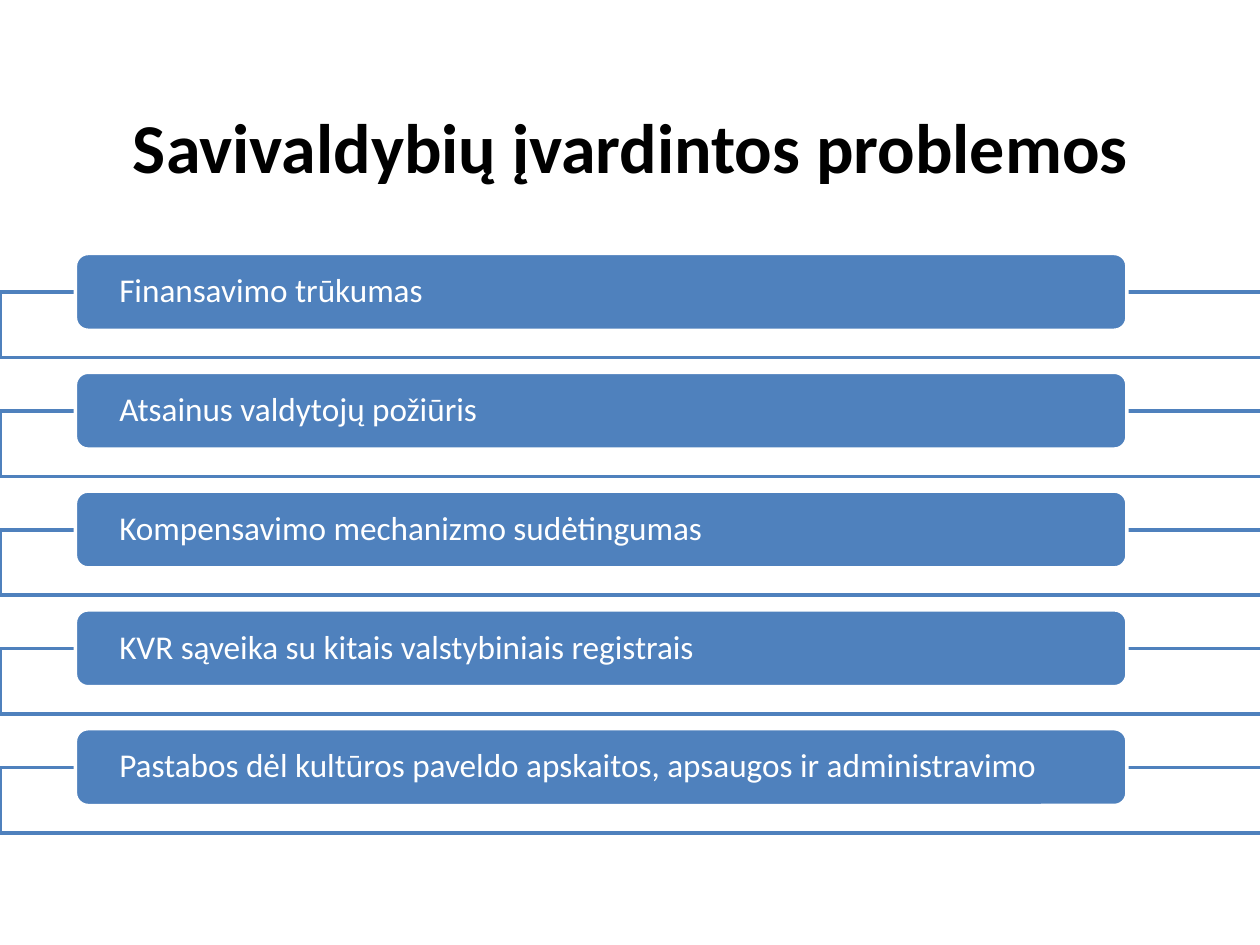
from lxml import etree
from pptx import Presentation
from pptx.dml.color import RGBColor
from pptx.enum.shapes import MSO_SHAPE as Shape
from pptx.enum.text import MSO_ANCHOR as Anchor, PP_ALIGN as Align
from pptx.oxml.ns import qn
from pptx.util import Cm, Pt

BLUE = RGBColor(0x4F, 0x81, 0xBD)
WHITE = RGBColor(0xFF, 0xFF, 0xFF)
BLACK = RGBColor(0x00, 0x00, 0x00)

PROBLEMS = [
    "Finansavimo trūkumas",
    "Atsainus valdytojų požiūris",
    "Kompensavimo mechanizmo sudėtingumas",
    "KVR sąveika su kitais valstybiniais registrais",
    "Pastabos dėl kultūros paveldo apskaitos, apsaugos ir administravimo",
]
FIRST_TOP = 5.11
ROW_STEP = 2.395
FRAME_DROP = 0.78

presentation = Presentation()
presentation.slide_width = Cm(25.4)
presentation.slide_height = Cm(19.05)
slide = presentation.slides.add_slide(presentation.slide_layouts[6])


def add_box(kind, left, top, width, height, fill, line):
    shape = slide.shapes.add_shape(kind, Cm(left), Cm(top), Cm(width), Cm(height))
    shape.shadow.inherit = False
    shape.fill.solid()
    shape.fill.fore_color.rgb = fill
    shape.line.color.rgb = line
    shape.line.width = Pt(2)
    return shape


def write(shape, text, size, color, align):
    paragraph = shape.text_frame.paragraphs[0]
    paragraph.text = text
    paragraph.alignment = align
    paragraph.font.name = "Calibri"
    paragraph.font.size = Pt(size)
    paragraph.font.color.rgb = color
    return paragraph


for row, problem in enumerate(PROBLEMS):
    top = FIRST_TOP + row * ROW_STEP

    frame = add_box(Shape.RECTANGLE, 0, top + FRAME_DROP, 30.3, 1.32, WHITE, BLUE)
    fill_color = frame.fill._xPr.find(qn("a:solidFill"))[0]
    etree.SubElement(fill_color, qn("a:alpha"), val="90000")

    label = add_box(Shape.ROUNDED_RECTANGLE, 1.52, top, 21.2, 1.55, BLUE, WHITE)
    text_frame = label.text_frame
    text_frame.word_wrap = True
    text_frame.vertical_anchor = Anchor.MIDDLE
    text_frame.margin_left = text_frame.margin_right = Cm(0.81)
    text_frame.margin_top = text_frame.margin_bottom = 0
    paragraph = write(label, problem, 19, WHITE, Align.LEFT)
    paragraph.line_spacing = 0.9

title = slide.shapes.add_textbox(Cm(0.71), Cm(1.96), Cm(24), Cm(1.96))
title.text_frame.word_wrap = True
paragraph = write(title, "Savivaldybių įvardintos problemos", 40, BLACK, Align.CENTER)
paragraph.font.bold = True

presentation.save("out.pptx")
